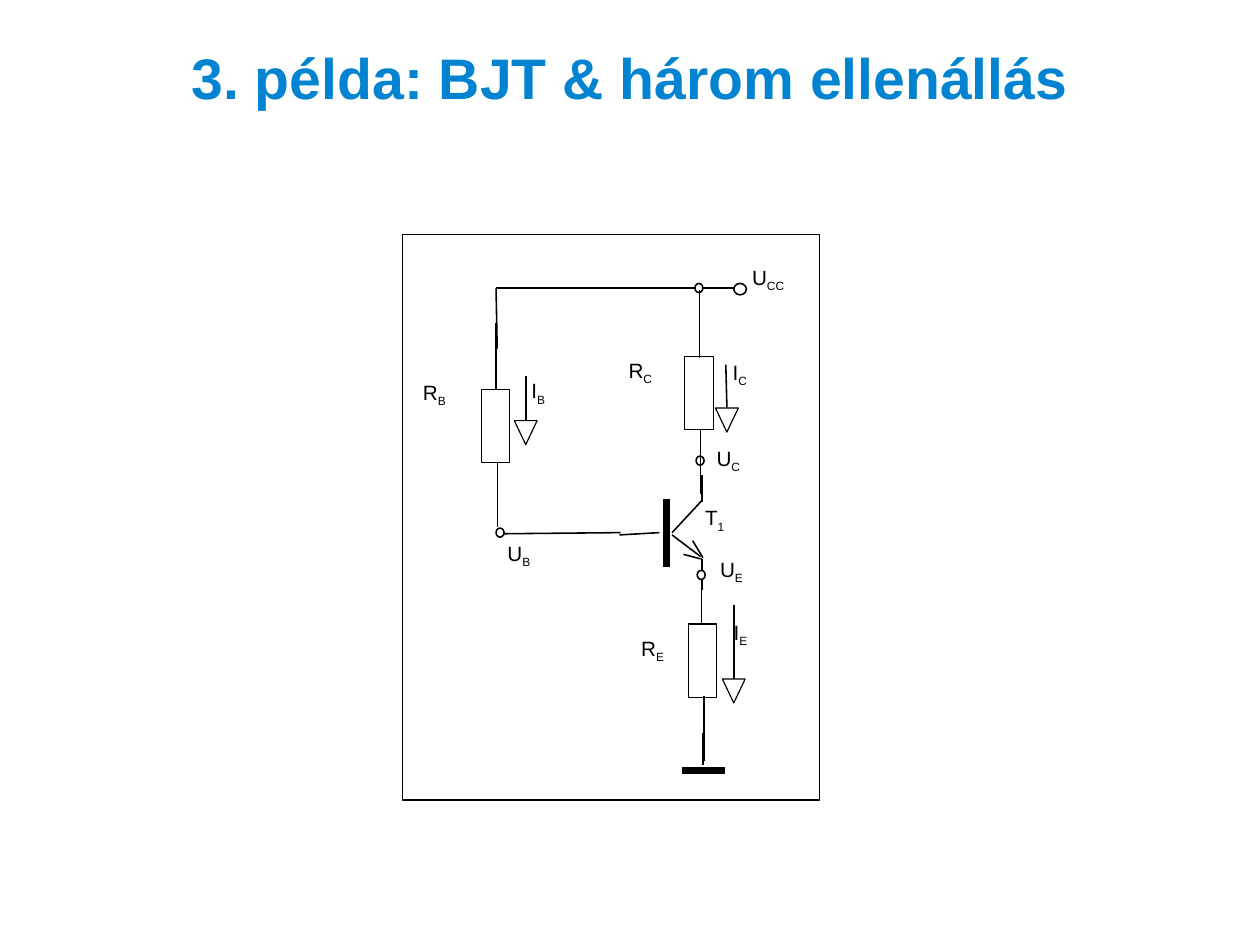
from pptx import Presentation, util as u
from pptx.dml.color import RGBColor
from pptx.enum import shapes as sh, text as tx
from pptx.oxml.ns import qn
from lxml import etree

BLACK = RGBColor(0, 0, 0)
WHITE = RGBColor(255, 255, 255)
BLUE = RGBColor(0x00, 0x84, 0xD1)
CELL = u.Inches(0.01)
WIDE, HIGH = u.Cm(28), u.Cm(21)

TITLE = "3. példa: BJT & három ellenállás"
HEADING = (30, 1, 1042, 138)
FRAME = (352, 205, 365, 495)
LABELS = [
    ("U", "CC", 657, 231), ("U", "C", 626, 389), ("U", "E", 629, 486),
    ("U", "B", 443, 472), ("T", "1", 616, 441), ("R", "C", 549, 312),
    ("R", "B", 369, 331), ("R", "E", 560, 555), ("I", "C", 640, 314),
    ("I", "B", 464, 330), ("I", "E", 641, 541),
]
SIZES = {"U": (37, 35), "T": (30, 41), "R": (45, 41), "I": (30, 35)}
RAIL = (434, 252, 642, 252)
NODES = [(642, 248, 11, 10), (609, 399, 7, 8), (608, 248, 7, 8), (434, 462, 7, 8)]
EMITTER = (610, 499, 7, 8)
BARS = [(597, 674, 634, 674), (583, 496, 583, 437)]
WIRES = [
    (615, 669, 615, 641), (614, 489, 614, 516), (598, 485, 613, 489),
    (577, 466, 542, 468), (588, 468, 613, 487), (614, 439, 614, 416),
    (615, 488, 606, 473), (588, 466, 614, 438), (441, 467, 543, 466),
    (434, 252, 435, 305),
]
LEADS = [
    (613, 432, 613, 410), (612, 276, 612, 313), (613, 412, 613, 375),
    (612, 276, 612, 254), (616, 666, 616, 644), (614, 510, 614, 547),
    (616, 646, 616, 609), (614, 510, 614, 488), (435, 461, 435, 439),
    (434, 305, 434, 341), (435, 440, 435, 404), (434, 305, 434, 283),
]
RESISTORS = [(599, 312), (602, 546), (421, 341)]
BODY = (25, 64)
CURRENTS = [(642, 529, 642, 594), (460, 329, 460, 368), (635, 319, 636, 357)]
HEAD = (10, 21)

deck = Presentation()
deck.slide_width, deck.slide_height = WIDE, HIGH
slide = deck.slides.add_slide(deck.slide_layouts[6])
parts = slide.shapes


def paint(part, width):
    part.shadow.inherit = False
    part.fill.solid()
    part.fill.fore_color.rgb = WHITE
    if width:
        part.line.color.rgb = BLACK
        part.line.width = u.Pt(width)
    else:
        part.line.fill.background()


def box(kind, area, width):
    part = parts.add_shape(kind, *(n * CELL for n in area))
    paint(part, width)
    return part


def wire(ends, width):
    line = parts.add_connector(sh.MSO_CONNECTOR.STRAIGHT, *(n * CELL for n in ends))
    line.line.color.rgb = BLACK
    line.line.width = u.Pt(width)
    etree.SubElement(line._element.spPr, qn("a:effectLst"))


def setup(part, inset, anchor, align):
    look = {"word_wrap": True, "vertical_anchor": anchor}
    for side in ("left", "top", "right", "bottom"):
        look["margin_" + side] = inset
    for name, value in look.items():
        setattr(part.text_frame, name, value)
    para = part.text_frame.paragraphs[0]
    para.alignment = align
    return para


def write(para, words, size, color, bold=False):
    run = para.add_run()
    run.text = words
    for name, value in {"size": u.Pt(size), "name": "Arial", "bold": bold}.items():
        setattr(run.font, name, value)
    run.font.color.rgb = color
    return run


def label(base, low, left, top):
    part = box(sh.MSO_SHAPE.RECTANGLE, (left, top, *SIZES[base]), 0)
    para = setup(part, CELL, tx.MSO_ANCHOR.TOP, tx.PP_ALIGN.LEFT)
    write(para, base, 13, BLACK)
    write(para, low, 13, BLACK).font._element.set("baseline", "-25000")


def arrow(ends):
    wire(ends, 1)
    tip, top = ends[2:]
    half, deep = HEAD
    form = parts.build_freeform(tip - half, top, scale=CELL)
    form.add_line_segments([(tip, top + deep), (tip + half, top)], close=True)
    paint(form.convert_to_shape(), 0.75)


box(sh.MSO_SHAPE.RECTANGLE, FRAME, 0.75)
for item in LABELS:
    label(*item)
wire(RAIL, 1)
for area in NODES:
    box(sh.MSO_SHAPE.OVAL, area, 1)
for group, width in ((BARS, 4), (WIRES, 1)):
    for ends in group:
        wire(ends, width)
for spot in RESISTORS:
    box(sh.MSO_SHAPE.RECTANGLE, (*spot, *BODY), 0.75)
for ends in LEADS:
    wire(ends, 0.75)
for ends in CURRENTS:
    arrow(ends)
box(sh.MSO_SHAPE.OVAL, EMITTER, 1)

head = parts.add_textbox(*(n * CELL for n in HEADING))
para = setup(head, 0, tx.MSO_ANCHOR.MIDDLE, tx.PP_ALIGN.CENTER)
para.line_spacing = 0.93
write(para, TITLE, 36, BLUE, True)

deck.save("out.pptx")
